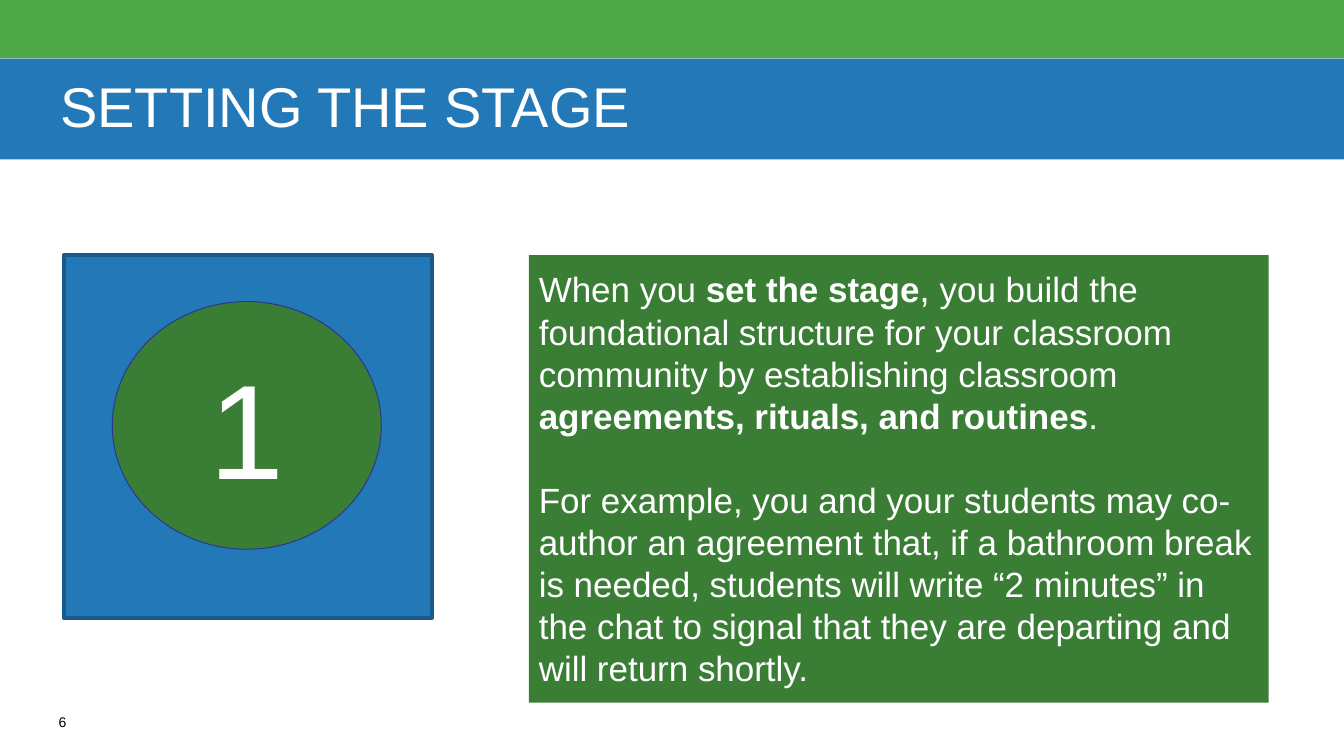
from pptx import Presentation
from pptx.dml.color import RGBColor
from pptx.enum.shapes import MSO_SHAPE
from pptx.enum.text import MSO_ANCHOR, PP_ALIGN
from pptx.util import Cm, Pt

RECT, OVAL = MSO_SHAPE.RECTANGLE, MSO_SHAPE.OVAL
TOP, MIDDLE = MSO_ANCHOR.TOP, MSO_ANCHOR.MIDDLE
LEFT, CENTER = PP_ALIGN.LEFT, PP_ALIGN.CENTER
BLUE, GREEN, LIME = "2379B8", "3A7E36", "4EA848"
WHITE, BLACK = "FFFFFF", "000000"
WIDTH, HEIGHT = 33.87, 19.05


def color(code):
    return RGBColor.from_string(code)


class Painter:
    font = "Arial"

    def __init__(self, slide):
        self.slide = slide

    def shape(self, kind, box, fill, line=None, weight=0):
        item = self.slide.shapes.add_shape(kind, *map(Cm, box))
        item.shadow.inherit = False
        item.fill.solid()
        item.fill.fore_color.rgb = color(fill)
        if line:
            item.line.color.rgb = color(line)
            item.line.width = Pt(weight)
        else:
            item.line.fill.background()
        return item

    def label(self, box):
        return self.slide.shapes.add_textbox(*map(Cm, box))

    def frame(self, item, anchor, side, edge):
        frame = item.text_frame
        frame.word_wrap = True
        frame.vertical_anchor = anchor
        frame.margin_left = frame.margin_right = Cm(side)
        frame.margin_top = frame.margin_bottom = Cm(edge)
        return frame

    def style(self, run, size, ink, bold=False):
        run.font.name = self.font
        run.font.size = Pt(size)
        run.font.color.rgb = color(ink)
        run.font.bold = bold

    def text(self, item, words, size, ink=WHITE, align=LEFT,
             anchor=MIDDLE, side=0.25, edge=0.25, pitch=1.0):
        frame = self.frame(item, anchor, side, edge)
        frame.text = words
        para = frame.paragraphs[0]
        para.alignment = align
        para.line_spacing = pitch
        self.style(para.runs[0], size, ink)

    def prose(self, item, paras, gap):
        frame = self.frame(item, TOP, 0.25, 0.25)
        for index, parts in enumerate(paras):
            para = frame.add_paragraph() if index else frame.paragraphs[0]
            para.alignment = LEFT
            para.space_before = Pt(gap if index else 0)
            for words, size, bold in parts:
                run = para.add_run()
                run.text = words
                self.style(run, size, WHITE, bold)


def main():
    deck = Presentation()
    deck.slide_width, deck.slide_height = Cm(WIDTH), Cm(HEIGHT)
    art = Painter(deck.slides.add_slide(deck.slide_layouts[6]))

    art.shape(RECT, (0, 0, WIDTH, 1.47), LIME)
    title = art.shape(RECT, (0, 1.48, WIDTH, 2.54), BLUE)
    art.text(title, "SETTING THE STAGE", 40, side=1.52, edge=0, pitch=0.9)

    page = art.label((1.48, 17.99, 1.07, 0.64))
    art.text(page, "6", 10, BLACK, anchor=TOP, side=0, edge=0)

    art.shape(RECT, (1.61, 6.43, 9.27, 9.14), BLUE, "1A5A8A", 3)
    badge = art.shape(OVAL, (2.83, 7.6, 6.78, 6.24), GREEN, "2B3890", 0.75)
    art.text(badge, "1", 96, align=CENTER)

    panel = art.shape(RECT, (13.33, 6.43, 18.64, 11.28), GREEN)
    intro = [
        ("When you ", 25, False),
        ("set the stage", 25, True),
        (",", 27, False),
        (" you build the foundational structure for your classroom "
         "community by establishing classroom ", 25, False),
        ("agreements, rituals, and routines", 25, True),
        (".", 25, False),
    ]
    case = [
        ("For example, you and your students may co-author an agreement "
         "that, if a bathroom break is needed, students will write "
         "“2 minutes” in the chat to signal that they are departing and "
         "will return shortly.", 25, False),
    ]
    art.prose(panel, [intro, case], gap=30)

    deck.save("out.pptx")


if __name__ == "__main__":
    main()
